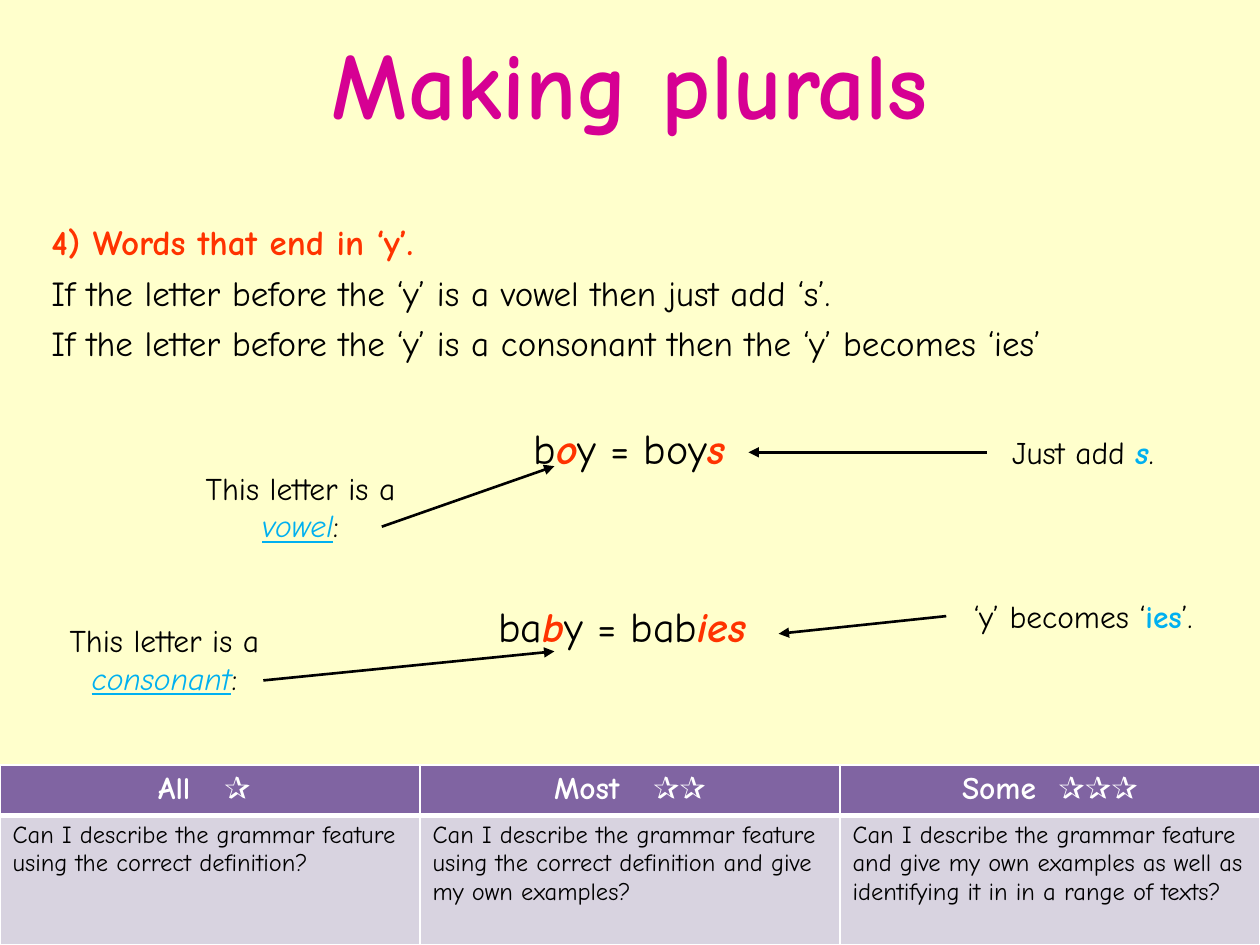
import pptx
import pptx.util
from lxml import etree
from pptx.dml.color import RGBColor
from pptx.enum.shapes import MSO_CONNECTOR
from pptx.enum.text import MSO_ANCHOR, PP_ALIGN
from pptx.oxml.ns import qn
from pptx.util import Inches, Pt

FONT = "Comic Neue"
CREAM = RGBColor(0xFF, 0xFF, 0xCC)
MAGENTA = RGBColor(0xD6, 0x00, 0x93)
RED = RGBColor(0xFF, 0x33, 0x00)
BLUE = RGBColor(0x00, 0xB0, 0xF0)
BLACK = RGBColor(0, 0, 0)
WHITE = RGBColor(0xFF, 0xFF, 0xFF)
PURPLE = RGBColor(0x80, 0x64, 0xA2)
LILAC = RGBColor(0xD8, 0xD3, 0xE0)

# Span styles: colour, bold, italic, underline
PLAIN = (BLACK, False, False, False)
HEADING = (RED, True, False, False)
LETTER = (RED, True, True, False)
TERM = (BLUE, False, True, True)
ENDING = (BLUE, True, True, False)
ENDING_UPRIGHT = (BLUE, True, False, False)

TITLE = "Making plurals"

# Alignment, size, space before, spans
RULES = [
    (PP_ALIGN.LEFT, 20, 5, [("4) Words that end in ‘y’.", HEADING)]),
    (PP_ALIGN.JUSTIFY, 20, 5,
     [("If the letter before the ‘y’ is a vowel then just add ‘s’. ", PLAIN)]),
    (PP_ALIGN.JUSTIFY, 20, 5,
     [("If the letter before the ‘y’ is a consonant then the ‘y’ becomes ‘ies’", PLAIN)]),
    (PP_ALIGN.CENTER, 24, 33.5,
     [("b", PLAIN), ("o", LETTER), ("y = boy", PLAIN), ("s", LETTER)]),
    (PP_ALIGN.CENTER, 24, 73,
     [("ba", PLAIN), ("b", LETTER), ("y = bab", PLAIN), ("ies", LETTER), (" ", PLAIN)]),
]

# Left, top, height, spans
NOTES = [
    (1.3, 3.67, 0.71, [("This letter is a ", PLAIN), ("vowel", TERM), (":", PLAIN)]),
    (0.22, 4.88, 0.71, [("This letter is a ", PLAIN), ("consonant", TERM), (":", PLAIN)]),
    (7.51, 3.39, 0.4, [("Just add ", PLAIN), ("s", ENDING), (".", PLAIN)]),
    (7.51, 4.69, 0.4, [("‘y’ becomes ‘", PLAIN), ("ies", ENDING_UPRIGHT), ("’.", PLAIN)]),
]
NOTE_WIDTH = 2.17

# Start x, start y, end x, end y
ARROWS = [
    (3.03, 4.18, 4.4, 3.7),
    (2.09, 5.4, 4.4, 5.17),
    (7.83, 3.59, 5.94, 3.59),
    (7.51, 4.89, 6.18, 5.03),
]

GOALS = [
    ("All   ✰ ", "Can I describe the grammar feature using the correct definition?"),
    ("Most   ✰✰", "Can I describe the grammar feature using the correct definition "
                  "and give my own examples?"),
    ("Some  ✰✰✰", "Can I describe the grammar feature and give my own examples "
                  "as well as identifying it in in a range of texts?"),
]
ROW_HEIGHTS = (0.37, 1.03)


def set_font(font, size, color, bold=False):
    font.name, font.size, font.bold = FONT, Pt(size), bold
    font.color.rgb = color


def write_spans(para, size, spans):
    for text, (color, bold, italic, underline) in spans:
        span = para.add_run()
        span.text = text
        set_font(span.font, size, color, bold)
        span.font.italic = italic
        span.font.underline = underline


def add_text_box(page, left, top, width, height):
    box = page.shapes.add_textbox(Inches(left), Inches(top), Inches(width), Inches(height))
    box.text_frame.word_wrap = True
    return box.text_frame


def add_title(page):
    title = page.shapes.title
    title.left, title.top = Inches(0), Inches(0.02)
    title.width, title.height = Inches(10), Inches(1.25)
    title.text_frame.text = TITLE
    title.text_frame.vertical_anchor = MSO_ANCHOR.MIDDLE
    para = title.text_frame.paragraphs[0]
    para.alignment = PP_ALIGN.CENTER
    set_font(para.font, 54, MAGENTA, True)


def add_rules(page):
    frame = add_text_box(page, 0.31, 1.7, 9.37, 4.95)
    for index, (alignment, size, gap, spans) in enumerate(RULES):
        para = frame.add_paragraph() if index else frame.paragraphs[0]
        para.alignment = alignment
        para.space_before = Pt(gap)
        write_spans(para, size, spans)


def add_arrow(page, *ends):
    arrow = page.shapes.add_connector(MSO_CONNECTOR.STRAIGHT, *map(Inches, ends))
    arrow.line.color.rgb = BLACK
    arrow.line.width = Pt(1.5)
    properties = arrow._element.spPr
    etree.SubElement(properties.find(qn("a:ln")), qn("a:tailEnd"), type="triangle")
    etree.SubElement(properties, qn("a:effectLst"))


def set_borders(cell, **widths):
    """Draw white borders; widths in points are keyed by side letter L, R, T, B."""
    properties = cell._tc.get_or_add_tcPr()
    for side, width in widths.items():
        line = etree.SubElement(properties, qn("a:ln" + side), w=str(Pt(width)))
        fill = etree.SubElement(line, qn("a:solidFill"))
        etree.SubElement(fill, qn("a:srgbClr"), val=str(WHITE))


def add_goals(page):
    table = page.shapes.add_table(2, len(GOALS), Inches(0), Inches(6.07), Inches(10),
                                  Inches(sum(ROW_HEIGHTS))).table
    for row, height in zip(table.rows, ROW_HEIGHTS):
        row.height = Inches(height)
    for column, texts in enumerate(GOALS):
        for row, text in enumerate(texts):
            header = row == 0
            cell = table.cell(row, column)
            set_borders(cell, L=1, R=1, T=1 if header else 3, B=3 if header else 1)
            cell.fill.solid()
            cell.fill.fore_color.rgb = PURPLE if header else LILAC
            cell.text = text
            para = cell.text_frame.paragraphs[0]
            para.alignment = PP_ALIGN.CENTER if header else PP_ALIGN.LEFT
            if header:
                set_font(para.font, 18, WHITE, True)
            else:
                set_font(para.font, 14, BLACK)


def main():
    deck = pptx.Presentation()
    deck.slide_width, deck.slide_height = Inches(10), Inches(7.5)
    page = deck.slides.add_slide(deck.slide_layouts[5])
    page.background.fill.solid()
    page.background.fill.fore_color.rgb = CREAM

    add_title(page)
    add_rules(page)
    add_goals(page)
    for ends in ARROWS:
        add_arrow(page, *ends)
    for left, top, height, spans in NOTES:
        para = add_text_box(page, left, top, NOTE_WIDTH, height).paragraphs[0]
        para.alignment = PP_ALIGN.CENTER
        write_spans(para, 18, spans)

    deck.save("out.pptx")


if __name__ == "__main__":
    main()
